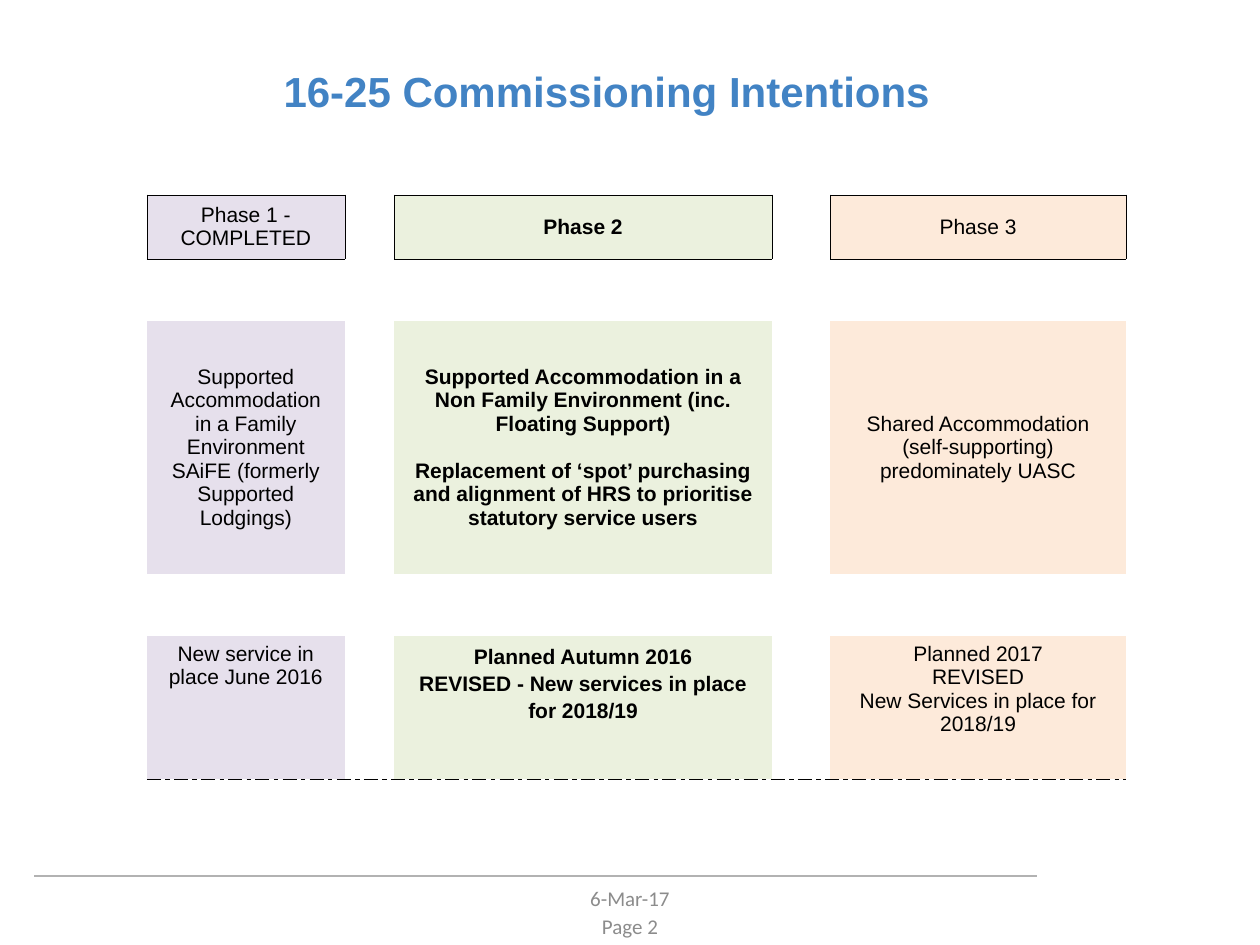
"""Build the 16-25 Commissioning Intentions slide with its phase table."""
import lxml.etree
import pptx
import pptx.dml.color
import pptx.enum.shapes
import pptx.enum.text
import pptx.oxml.ns
import pptx.util

Pt = pptx.util.Pt
ALIGN = pptx.enum.text.PP_ALIGN
ANCHOR = pptx.enum.text.MSO_ANCHOR
COLORS = {
    "white": "FFFFFF", "black": "000000", "title": "4283C4", "footer": "8C8C8C",
    "rule": "B2B2B2", "lilac": "E6E0EC", "green": "EBF1DE", "peach": "FDEADA",
}
FONTS = {
    "title": {"name": "Arial", "size": Pt(24), "bold": True},
    "plain": {"name": "Arial", "size": Pt(12), "bold": False},
    "strong": {"name": "Arial", "size": Pt(12), "bold": True},
    "footer": {"name": "Calibri", "size": Pt(12), "bold": False},
}
COLUMN_WIDTHS = [18.75, 113, 28.25, 108, 108, 33.25, 169]
ROW_HEIGHTS = [36.75, 35.25, 144.75, 35.25, 82]
PHASES = {
    1: ("lilac", "plain"),
    3: ("green", "strong"),
    6: ("peach", "plain"),
}
CELL_TEXTS = {
    (0, 1): ["Phase 1 - COMPLETED"],
    (0, 3): ["Phase 2"],
    (0, 6): ["Phase 3"],
    (2, 1): ["Supported Accommodation in a Family Environment SAiFE (formerly Supported Lodgings)"],
    (2, 3): ["Supported Accommodation in a Non Family Environment (inc.",
             "Floating Support)",
             "Replacement of ‘spot’ purchasing and alignment of HRS to prioritise statutory service users"],
    (2, 6): ["Shared Accommodation (self-supporting) predominately UASC"],
    (4, 1): ["New service in place June 2016"],
    (4, 3): ["Planned Autumn 2016", "REVISED - New services in place for 2018/19"],
    (4, 6): ["Planned 2017", "REVISED", "New Services in place for 2018/19"],
}


def color(name):
    """Return the named colour as an RGB value."""
    return pptx.dml.color.RGBColor.from_string(COLORS[name])


class SlideBuilder:
    """Hold the current slide and add styled elements to it."""

    def __init__(self, presentation):
        """Add a title-only slide to the presentation."""
        self.slide = presentation.slides.add_slide(presentation.slide_layouts[5])

    def fill_text(self, frame, lines, font, ink):
        """Fill a text frame with centred paragraphs."""
        frame.word_wrap = True
        for index, line in enumerate(lines):
            paragraph = frame.paragraphs[0] if index == 0 else frame.add_paragraph()
            paragraph.alignment = ALIGN.CENTER
            run = paragraph.add_run()
            run.text = line
            for key, value in FONTS[font].items():
                setattr(run.font, key, value)
            run.font.color.rgb = color(ink)

    def title(self, text, left, top, width, height):
        """Place and fill the title placeholder."""
        shape = self.slide.shapes.title
        box = {"left": left, "top": top, "width": width, "height": height}
        for key, value in box.items():
            setattr(shape, key, Pt(value))
        shape.text_frame.vertical_anchor = ANCHOR.MIDDLE
        self.fill_text(shape.text_frame, [text], "title", "title")

    def footer(self, text, top):
        """Add one centred footer line."""
        shape = self.slide.shapes.add_textbox(Pt(246), Pt(top), Pt(228), Pt(16))
        shape.text_frame.vertical_anchor = ANCHOR.MIDDLE
        self.fill_text(shape.text_frame, [text], "footer", "footer")

    def rule(self, left, right, top):
        """Add a horizontal rule."""
        line = self.slide.shapes.add_connector(
            pptx.enum.shapes.MSO_CONNECTOR.STRAIGHT, Pt(left), Pt(top), Pt(right), Pt(top))
        line.line.color.rgb = color("rule")
        line.line.width = Pt(1)
        lxml.etree.SubElement(line._element.spPr, pptx.oxml.ns.qn("a:effectLst"))

    def borders(self, cell, sides, dash):
        """Draw the given sides of a cell and clear the others."""
        properties = cell._tc.get_or_add_tcPr()
        for index, side in enumerate("LRTB"):
            line = lxml.etree.Element(pptx.oxml.ns.qn(f"a:ln{side}"), w=str(Pt(0.25)))
            if side in sides:
                fill = lxml.etree.SubElement(line, pptx.oxml.ns.qn("a:solidFill"))
                lxml.etree.SubElement(fill, pptx.oxml.ns.qn("a:srgbClr"), val=COLORS["black"])
                lxml.etree.SubElement(line, pptx.oxml.ns.qn("a:prstDash"), val=dash)
            else:
                lxml.etree.SubElement(line, pptx.oxml.ns.qn("a:noFill"))
            properties.insert(index, line)

    def table(self, left, top):
        """Add the table of phases."""
        table = self.slide.shapes.add_table(
            len(ROW_HEIGHTS), len(COLUMN_WIDTHS), Pt(left), Pt(top),
            Pt(sum(COLUMN_WIDTHS)), Pt(sum(ROW_HEIGHTS))).table
        table.first_row = table.horz_banding = False
        for column, width in zip(table.columns, COLUMN_WIDTHS):
            column.width = Pt(width)
        for row, height in zip(table.rows, ROW_HEIGHTS):
            row.height = Pt(height)
        last_row = len(ROW_HEIGHTS) - 1
        for row in range(len(ROW_HEIGHTS)):
            for column in range(len(COLUMN_WIDTHS)):
                cell = table.cell(row, column)
                phase = 3 if column == 4 else column
                fill, font = PHASES.get(phase, ("white", "plain"))
                cell.fill.solid()
                cell.fill.fore_color.rgb = color(fill if row % 2 == 0 else "white")
                cell.vertical_anchor = ANCHOR.TOP if row == last_row else ANCHOR.MIDDLE
                sides = ""
                if row == 0:
                    sides = "LRTB" if phase in PHASES else "LR" if column else "R"
                elif row == 1 and phase in PHASES:
                    sides = "T"
                elif row == last_row and column:
                    sides = "B"
                self.borders(cell, sides, "lgDashDot" if row == last_row else "solid")
                if (row, column) in CELL_TEXTS:
                    self.fill_text(cell.text_frame, CELL_TEXTS[row, column], font, "black")
        for row in (0, 1, 2, last_row):
            table.cell(row, 3).merge(table.cell(row, 4))
        table.cell(2, 3).text_frame.paragraphs[-1].space_before = Pt(13.5)
        for paragraph in table.cell(last_row, 3).text_frame.paragraphs:
            paragraph.line_spacing = 1.15


def main():
    """Build and save the presentation."""
    presentation = pptx.Presentation()
    presentation.slide_width, presentation.slide_height = Pt(720), Pt(540)
    builder = SlideBuilder(presentation)
    builder.footer("Page 2", 521.5)
    builder.rule(19.5, 592.5, 500.5)
    builder.footer("6-Mar-17", 505.5)
    builder.title("16-25 Commissioning Intentions\t", 36, 21.5, 648, 61)
    builder.table(65.25, 111.25)
    presentation.save("out.pptx")


if __name__ == "__main__":
    main()
